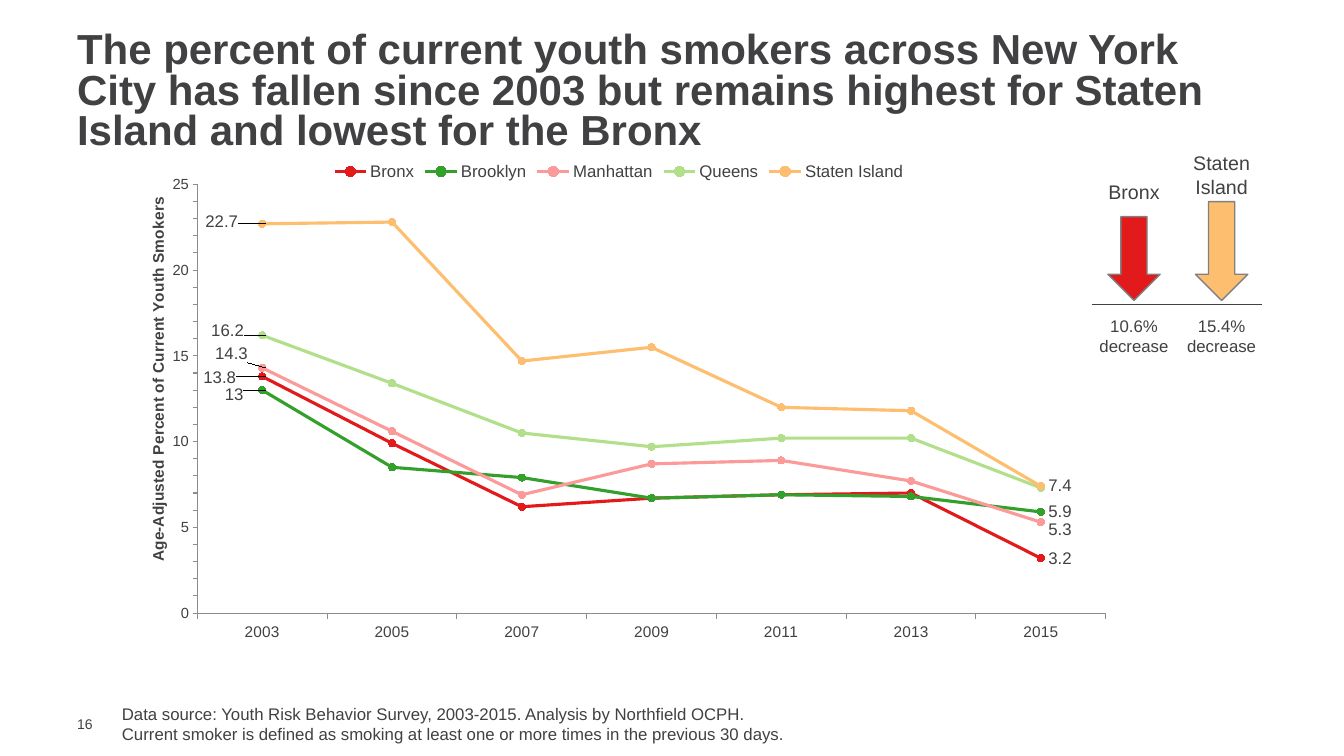
from dataclasses import dataclass

from lxml import etree
from pptx import Presentation
from pptx import util as u
from pptx.chart import data
from pptx.dml import color
from pptx.enum import chart as ch, shapes, text
from pptx.oxml import parse_xml
from pptx.oxml.ns import nsdecls, qn

Pt = u.Pt
rgb = color.RGBColor.from_string


@dataclass(frozen=True)
class Theme:
    font: str = "Arial"
    ink: str = "414042"
    axis: str = "8D8B8F"
    edge: str = "808080"
    bronx: str = "E31A1C"
    brook: str = "33A02C"
    manh: str = "FB9A99"
    queens: str = "B2DF8A"
    staten: str = "FDBF6F"
    title: float = 30
    name: float = 14
    body: float = 12
    label: float = 11
    tick: float = 10.5
    small: float = 10


def layout(parent, index, x, y, size=None, kind="factor"):
    """Put a manual layout into a chart element."""
    for old in parent.findall(qn("c:layout")):
        parent.remove(old)
    parts = [("xMode", kind), ("yMode", kind), ("x", x), ("y", y)]
    if size:
        parts = [("layoutTarget", "inner")] + parts + list(zip("wh", size))
    body = "".join(f'<c:{tag} val="{val}"/>' for tag, val in parts)
    parent.insert(index, parse_xml(
        f'<c:layout {nsdecls("c")}><c:manualLayout>{body}</c:manualLayout></c:layout>'))


class Board:
    def __init__(self, slide, theme):
        self.slide, self.theme = slide, theme

    def style(self, font, size, bold=False):
        font.name, font.size, font.bold = self.theme.font, Pt(size), bold
        font.color.rgb = rgb(self.theme.ink)

    def text(self, box, lines, size, bold=False, align="LEFT", mid=False,
             space=1.0, inset=None):
        frame = self.slide.shapes.add_textbox(*map(Pt, box)).text_frame
        frame.word_wrap = True
        if mid:
            frame.vertical_anchor = text.MSO_ANCHOR.MIDDLE
        if inset is not None:
            frame.margin_left = Pt(inset)
            frame.margin_top = frame.margin_right = frame.margin_bottom = 0
        frame.text = lines
        for para in frame.paragraphs:
            para.alignment = text.PP_ALIGN[align]
            para.line_spacing = space
            for run in para.runs:
                self.style(run.font, size, bold)

    def arrow(self, box, fill):
        shape = self.slide.shapes.add_shape(
            shapes.MSO_SHAPE.DOWN_ARROW, *map(Pt, box))
        shape.shadow.inherit = False
        shape.fill.solid()
        shape.fill.fore_color.rgb = rgb(fill)
        shape.line.color.rgb = rgb(self.theme.edge)
        shape.line.width = Pt(1)

    def line(self, x1, y1, x2, y2):
        rule = self.slide.shapes.add_connector(
            shapes.MSO_CONNECTOR.STRAIGHT, *map(Pt, (x1, y1, x2, y2)))
        rule.line.color.rgb = rgb(self.theme.ink)
        rule.line.width = Pt(0.75)
        etree.SubElement(rule.element.spPr, qn("a:effectLst"))

    def axis(self, axis, size):
        axis.has_major_gridlines = False
        axis.format.line.color.rgb = rgb(self.theme.axis)
        axis.format.line.width = Pt(0.75)
        self.style(axis.tick_labels.font, size)

    def series(self, line, tint, shifts):
        line.smooth = False
        line.format.line.color.rgb = rgb(tint)
        line.format.line.width = Pt(2.25)
        mark = line.marker
        mark.style, mark.size = ch.XL_MARKER_STYLE.CIRCLE, 5
        mark.format.fill.solid()
        mark.format.fill.fore_color.rgb = rgb(tint)
        mark.format.line.color.rgb = rgb(tint)
        # Labels on the end points, with leader lines
        labels = line.data_labels
        labels.show_value = False
        for index, shift in shifts.items():
            label = line.points[index].data_label
            self.style(label.font, self.theme.body)
            label.position = ch.XL_LABEL_POSITION.RIGHT
            node = labels._element.xpath(f"c:dLbl[c:idx/@val={index}]")[0]
            if any(shift):
                layout(node, 1, *shift)
        labels._element.append(parse_xml(
            f'<c:extLst {nsdecls("c")}><c:ext '
            'uri="{CE6537A1-D6FC-4f65-9D91-7224C49458BB}" '
            'xmlns:c15="http://schemas.microsoft.com/office/drawing/2012/chart">'
            '<c15:showLeaderLines val="1"/></c:ext></c:extLst>'))

    def chart(self, box, years, rows, caption):
        look = self.theme
        source = data.CategoryChartData()
        source.categories = years
        for name, _, vals, _ in rows:
            source.add_series(name, vals)
        chart = self.slide.shapes.add_chart(
            ch.XL_CHART_TYPE.LINE_MARKERS, *map(Pt, box), source).chart
        self.style(chart.font, look.small)
        chart.has_title = False
        chart.has_legend = True
        chart.legend.position = ch.XL_LEGEND_POSITION.TOP
        chart.legend.include_in_layout = False
        self.style(chart.legend.font, look.body)
        layout(chart.element.xpath(".//c:plotArea")[0], 0, 0.068, 0.064,
               (0.931, 0.826), "edge")
        # Axes
        cat, val = chart.category_axis, chart.value_axis
        self.axis(cat, look.label)
        self.axis(val, look.tick)
        cat.major_tick_mark = ch.XL_TICK_MARK.OUTSIDE
        val.minimum_scale, val.maximum_scale = 0, 25
        val.major_unit, val.minor_unit = 5, 1
        val.major_tick_mark = ch.XL_TICK_MARK.NONE
        val.minor_tick_mark = ch.XL_TICK_MARK.OUTSIDE
        frame = val.axis_title.text_frame
        frame.text = caption
        self.style(frame.paragraphs[0].runs[0].font, look.label, True)
        turn = val.axis_title.element.xpath(".//a:bodyPr")[0]
        turn.set("rot", "-5400000")
        turn.set("vert", "horz")
        layout(val.axis_title.element, 1, 0.014, 0.083, kind="edge")
        # Series
        chart.plots[0].vary_by_categories = False
        for line, (_, tint, _, shifts) in zip(chart.plots[0].series, rows):
            self.series(line, tint, shifts)


def main():
    deck = Presentation()
    deck.slide_width, deck.slide_height = Pt(960), Pt(540)
    look = Theme()
    board = Board(deck.slides.add_slide(deck.slide_layouts[6]), look)

    # Title, page number and source note
    board.text((48, 19.4, 864, 94.3),
               "The percent of current youth smokers across New York City has "
               "fallen since 2003 but remains highest for Staten Island and "
               "lowest for the Bronx", look.title, bold=True, mid=True, space=0.8)
    board.text((48, 511.2, 31, 12.2), "16", look.small, mid=True, inset=7.2)
    board.text((80, 499, 699, 36),
               "Data source: Youth Risk Behavior Survey, 2003-2015. "
               "Analysis by Northfield OCPH.\n"
               "Current smoker is defined as smoking at least one or more "
               "times in the previous 30 days.", look.body)

    # Chart: name, colour, values, label shift by point
    rows = [
        ("Bronx", look.bronx, (13.8, 9.9, 6.2, 6.7, 6.9, 7, 3.2),
         {0: (-0.068, 0.003), 6: (0, 0)}),
        ("Brooklyn", look.brook, (13, 8.5, 7.9, 6.7, 6.9, 6.8, 5.9),
         {0: (-0.046, 0.009), 6: (0, 0)}),
        ("Manhattan", look.manh, (14.3, 10.6, 6.9, 8.7, 8.9, 7.7, 5.3),
         {0: (-0.056, -0.027), 6: (0, 0.015)}),
        ("Queens", look.queens, (16.2, 13.4, 10.5, 9.7, 10.2, 10.2, 7.3),
         {0: (-0.06, -0.008)}),
        ("Staten Island", look.staten, (22.7, 22.8, 14.7, 15.5, 12, 11.8, 7.4),
         {0: (-0.066, -0.004), 6: (0, 0)}),
    ]
    years = [str(year) for year in range(2003, 2016, 2)]
    board.chart((93.6, 108, 697, 370.8), years, rows,
                "Age-Adjusted Percent of Current Youth Smokers")

    # Decrease arrows: name, drop, colour, centre, name width, name top, arrow top
    drops = [("Bronx", "10.6%", look.bronx, 810, 84, 124.6, 154.8),
             ("Staten Island", "15.4%", look.staten, 872.6, 65.5, 104.4, 144)]
    for name, drop, tint, mid, wide, top, tip in drops:
        board.text((mid - wide / 2, top, wide, 40), name, look.name, align="CENTER")
        board.arrow((mid - 18.7, tip, 37.4, 214.6 - tip), tint)
        board.text((mid - 37, 221.8, 74, 36), drop + " decrease", look.body,
                   align="CENTER")
    board.line(779.8, 217.4, 901.4, 217.4)

    deck.save("out.pptx")


if __name__ == "__main__":
    main()
